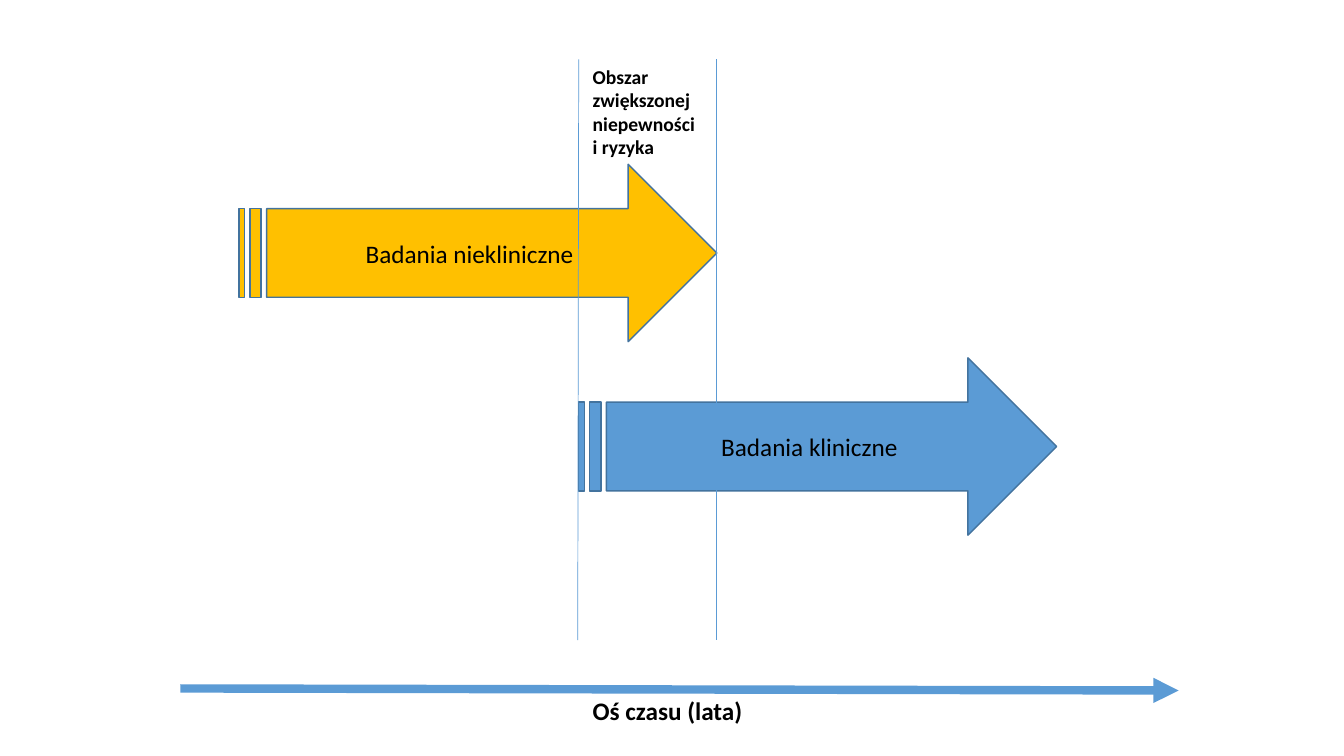
from lxml.etree import SubElement
from pptx import Presentation
from pptx.dml.color import RGBColor
from pptx.enum.shapes import MSO_CONNECTOR as CONN, MSO_SHAPE as SHAPE
from pptx.enum.text import MSO_ANCHOR as ANCHOR, MSO_AUTO_SIZE as AUTO, PP_ALIGN as ALIGN
from pptx.oxml.ns import qn
from pptx.util import Emu, Pt

BLACK = RGBColor(0x00, 0x00, 0x00)
WHITE = RGBColor(0xFF, 0xFF, 0xFF)
AMBER = RGBColor(0xFF, 0xC0, 0x00)
BLUE = RGBColor(0x5B, 0x9B, 0xD5)
OUTLINE = RGBColor(0x43, 0x73, 0x9E)


def px(n):
    """Convert px, 100 to the inch, to EMU."""
    return Emu(n * 9144)


class Diagram:
    font = "Calibri"

    def __init__(self, slide):
        self.slide = slide
        fill = slide.background.fill
        fill.solid()
        fill.fore_color.rgb = WHITE

    def set_text(self, p, text, size, bold=False):
        p.text = text
        f = p.font
        f.name, f.size, f.bold = self.font, Pt(size), bold
        f.color.rgb = BLACK

    def phase(self, text, x, y, w, h, color):
        """Add a striped arrow for one phase of research."""
        s = self.slide.shapes.add_shape(SHAPE.STRIPED_RIGHT_ARROW, px(x), px(y), px(w), px(h))
        s.shadow.inherit = False
        s.fill.solid()
        s.fill.fore_color.rgb = color
        s.line.color.rgb = OUTLINE
        s.line.width = Pt(1)
        tf = s.text_frame
        tf.vertical_anchor = ANCHOR.MIDDLE
        p = tf.paragraphs[0]
        p.alignment = ALIGN.CENTER
        self.set_text(p, text, 18)

    def line(self, x1, y1, x2, y2, width, arrow=False):
        s = self.slide.shapes.add_connector(CONN.STRAIGHT, px(x1), px(y1), px(x2), px(y2))
        s.line.color.rgb = BLUE
        s.line.width = Pt(width)
        sp = s._element.spPr
        if arrow:
            SubElement(sp.find(qn("a:ln")), qn("a:tailEnd"), type="triangle")
        SubElement(sp, qn("a:effectLst"))

    def label(self, text, x, y, w, h, size, wrap=True):
        s = self.slide.shapes.add_textbox(px(x), px(y), px(w), px(h))
        tf = s.text_frame
        tf.word_wrap = wrap
        tf.auto_size = AUTO.SHAPE_TO_FIT_TEXT
        self.set_text(tf.paragraphs[0], text, size, bold=True)


def main():
    prs = Presentation()
    prs.slide_width, prs.slide_height = px(1333), px(750)
    d = Diagram(prs.slides.add_slide(prs.slide_layouts[6]))

    arrow_w, arrow_h = 474, 176
    nonclinical_x, clinical_x = 237, 574
    overlap_end = nonclinical_x + arrow_w
    top, bottom = 59, 635

    d.phase("Badania niekliniczne", nonclinical_x, 163, arrow_w, arrow_h, AMBER)
    d.phase("Badania kliniczne", clinical_x, 355, arrow_w, arrow_h, BLUE)
    d.line(overlap_end, top, overlap_end, bottom, 0.5)
    d.line(clinical_x - 1, bottom, clinical_x, top, 0.5)
    d.line(179, 683, 1169, 685, 6, arrow=True)
    d.label("Oś czasu (lata)", 578, 685, 170, 40, 18, wrap=False)
    d.label("Obszar zwiększonej niepewności i ryzyka", 578, top, 122, 104, 14)

    prs.save("out.pptx")


if __name__ == "__main__":
    main()
